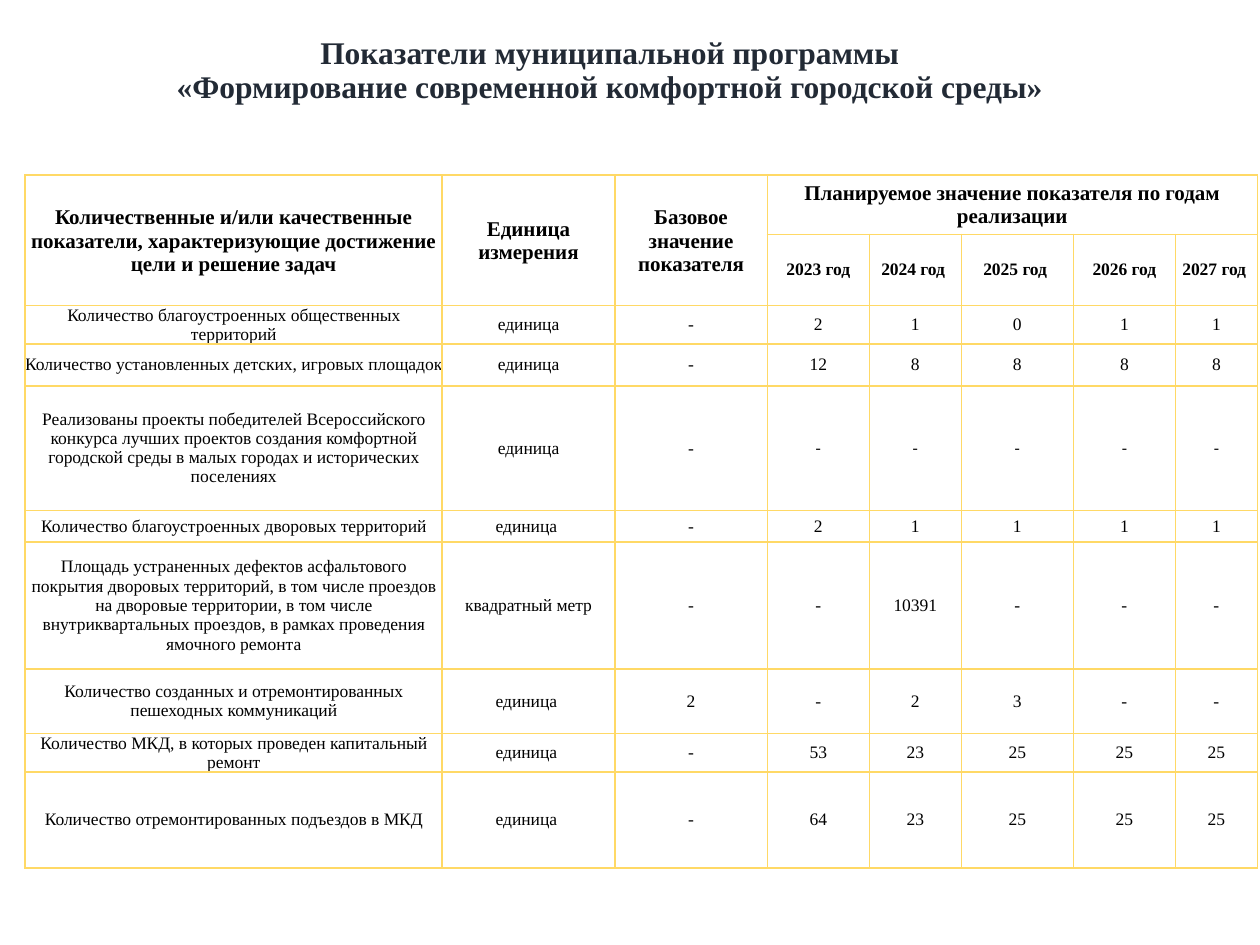
from lxml import etree
from pptx import Presentation
from pptx import util as u
from pptx.dml.color import RGBColor
from pptx.enum import text
from pptx.oxml.ns import qn

HUES = {"title": "222A35", "text": "000000", "line": "FFD966"}
COLS = [33.1, 13.7, 12.1, 8.1, 7.3, 8.9, 8.1, 6.5]
ROWS = [4.7, 3.1, 2.7, 3.3, 9.9, 2.5, 10.1, 5.1, 2.5, 7.6]
HEAD = [
    "Количественные и/или качественные показатели, характеризующие достижение цели и решение задач",
    "Единица измерения",
    "Базовое значение показателя",
    "Планируемое значение показателя по годам реализации",
]
YEARS = ["2023 год", "2024 год ", "2025 год ", "2026 год", "2027 год "]
DATA = [
    ("Количество благоустроенных общественных территорий", "единица", "- 2 1 0 1 1"),
    ("Количество установленных детских, игровых площадок", "единица", "- 12 8 8 8 8"),
    ("Реализованы проекты победителей Всероссийского конкурса лучших проектов "
     "создания комфортной городской среды в малых городах и исторических поселениях",
     "единица", "- - - - - -"),
    ("Количество благоустроенных дворовых территорий", "единица ", "- 2 1 1 1 1"),
    ("Площадь устраненных дефектов асфальтового покрытия дворовых территорий, "
     "в том числе проездов на дворовые территории, в том числе внутриквартальных "
     "проездов, в рамках проведения ямочного ремонта",
     "квадратный метр", "- - 10391 - - -"),
    ("Количество созданных и отремонтированных пешеходных коммуникаций",
     "единица ", "2 - 2 3 - -"),
    ("Количество МКД, в которых проведен капитальный ремонт",
     "единица ", "- 53 23 25 25 25"),
    ("Количество отремонтированных подъездов в МКД", "единица ", "- 64 23 25 25 25"),
]


class Deck:
    font = "Times New Roman"
    across, down = 100, 75

    def __init__(self):
        self.prs = Presentation()
        self.prs.slide_width, self.prs.slide_height = u.Inches(10), u.Inches(7.5)
        self.slide = self.prs.slides.add_slide(self.prs.slide_layouts[5])

    def wide(self, n):
        return round(self.prs.slide_width * n / self.across)

    def high(self, n):
        return round(self.prs.slide_height * n / self.down)

    def put(self, item, vals):
        for key, val in vals.items():
            setattr(item, key, val)

    def label(self, frame, words, size, bold, hue):
        frame.text = words
        para = frame.paragraphs[0]
        para.alignment = text.PP_ALIGN.CENTER
        for run in para.runs:
            self.put(run.font, {"name": self.font, "size": u.Pt(size), "bold": bold})
            run.font.color.rgb = RGBColor.from_string(HUES[hue])
        return para

    def title(self, words, x, y, w, h):
        box = self.slide.shapes.title
        self.put(box, {"left": self.wide(x), "top": self.high(y),
                       "width": self.wide(w), "height": self.high(h)})
        para = self.label(box.text_frame, words, 18, True, "title")
        para.line_spacing = 0.9
        self.put(box.text_frame, {"word_wrap": True, "auto_size": text.MSO_AUTO_SIZE.NONE,
                                  "vertical_anchor": text.MSO_ANCHOR.MIDDLE})

    def table(self, x, y, cols, rows):
        grid = self.slide.shapes.add_table(
            len(rows), len(cols), self.wide(x), self.high(y),
            self.wide(sum(cols)), self.high(sum(rows))).table
        self.put(grid, {"first_row": False, "horz_banding": False})
        for col, size in zip(grid.columns, cols):
            col.width = self.wide(size)
        for row, size in zip(grid.rows, rows):
            row.height = self.high(size)
        for cell in grid.iter_cells():
            self.frame(cell)
        return grid

    def frame(self, cell):
        prop = cell._tc.get_or_add_tcPr()
        for side in "LRTB":
            line = etree.SubElement(prop, qn(f"a:ln{side}"), w=str(u.Pt(1)))
            fill = etree.SubElement(line, qn("a:solidFill"))
            etree.SubElement(fill, qn("a:srgbClr"), val=HUES["line"])
        cell.fill.background()
        self.put(cell, {"margin_left": 0, "margin_right": 0, "margin_top": 0,
                        "margin_bottom": 0, "vertical_anchor": text.MSO_ANCHOR.MIDDLE})

    def cell(self, cell, words, size=10, bold=False, pad=0, top=0):
        self.put(cell, {"margin_left": self.wide(pad), "margin_right": self.wide(pad),
                        "margin_top": self.high(top)})
        self.label(cell.text_frame, words, size, bold, "text")


def main():
    deck = Deck()
    deck.title("Показатели муниципальной программы\v"
               "«Формирование современной комфортной городской среды»",
               3.5, 2.9, 89.8, 5.5)
    grid = deck.table(2, 13.9, COLS, ROWS)
    for c, words in enumerate(HEAD):
        last = (0, 7) if c == 3 else (1, c)
        grid.cell(0, c).merge(grid.cell(*last))
        gap = 0 if c == 3 else 0.1
        deck.cell(grid.cell(0, c), words, 12, True, gap, gap)
    for c, words in enumerate(YEARS, 3):
        deck.cell(grid.cell(1, c), words, bold=True)
    for r, (name, unit, vals) in enumerate(DATA, 2):
        for c, words in enumerate([name, unit, *vals.split()]):
            size = 9 if r == 4 and c > 2 else 10
            pad = 0.4 if (r > 5 and c > 1) or (r, c) == (8, 0) else 0
            deck.cell(grid.cell(r, c), words, size, pad=pad)
    deck.prs.save("out.pptx")


if __name__ == "__main__":
    main()
